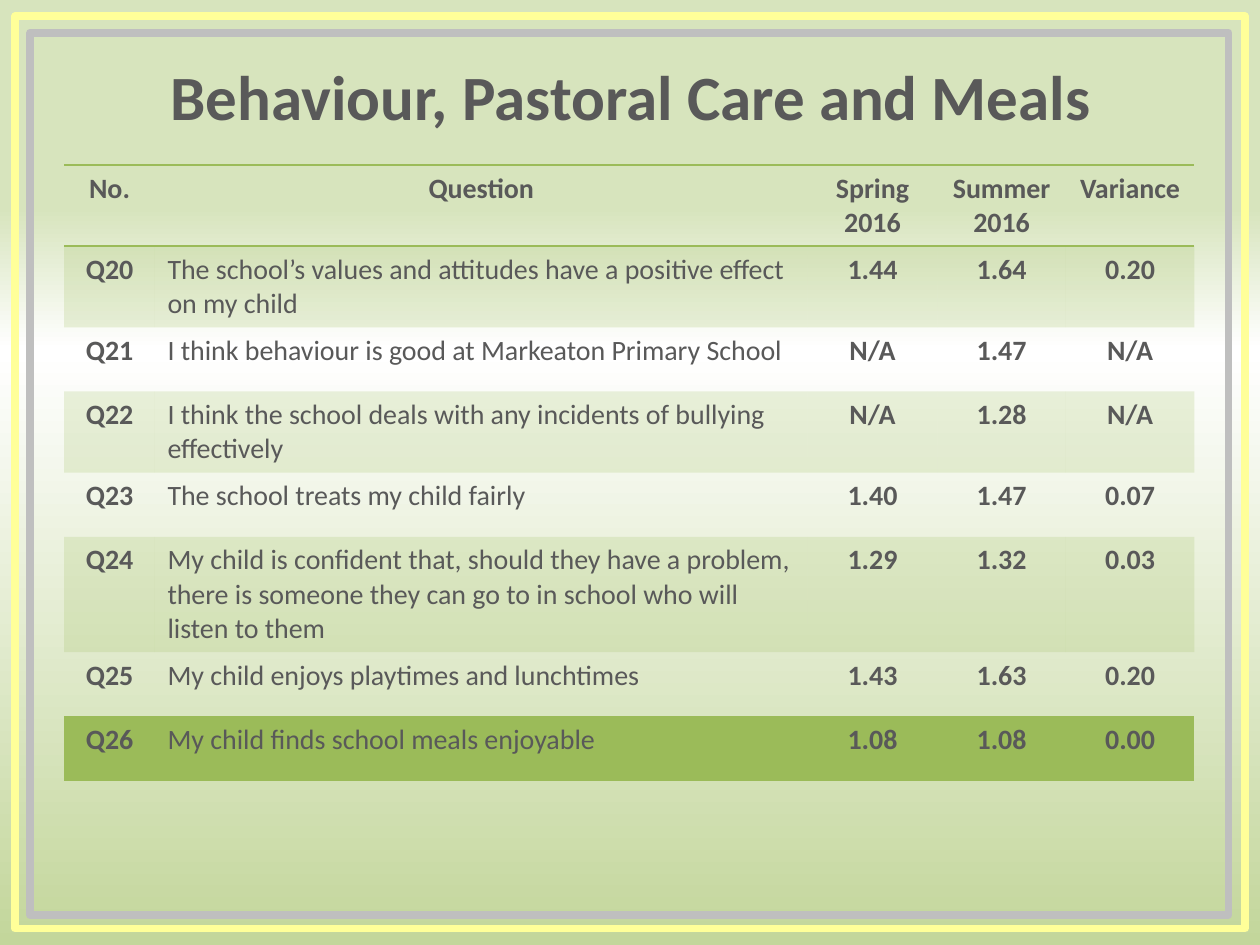
from copy import deepcopy

from lxml.etree import SubElement as Sub
from pptx import Presentation
from pptx.dml.color import RGBColor as RGB
from pptx.enum.shapes import MSO_SHAPE as Shape
from pptx.enum.text import MSO_ANCHOR as Anchor, PP_ALIGN as Align
from pptx.oxml.ns import qn
from pptx.util import Inches, Pt

GREY = RGB(0x59, 0x59, 0x59)
SILVER = RGB(0xBF, 0xBF, 0xBF)
YELLOW = RGB(0xFF, 0xFF, 0x99)
GREEN = RGB(0x9B, 0xBB, 0x59)
PALE = RGB(0xD7, 0xE4, 0xBD)
WHITE = RGB(0xFF, 0xFF, 0xFF)
MOSS = RGB(0xC3, 0xD6, 0x9B)

PLAIN = "{2D5ABB26-0587-4C30-8999-92F81FD0307C}"  # no style, no grid
COLS = [0.72, 5.18, 1.03, 1.02, 1.02]
ROWS = [
    ("No.", "Question", "Spring 2016", "Summer 2016", "Variance"),
    ("Q20", "The school’s values and attitudes have a positive effect on my child",
     "1.44", "1.64", "0.20"),
    ("Q21", "I think behaviour is good at Markeaton Primary School",
     "N/A", "1.47", "N/A"),
    ("Q22", "I think the school deals with any incidents of bullying effectively",
     "N/A", "1.28", "N/A"),
    ("Q23", "The school treats my child fairly", "1.40", "1.47", "0.07"),
    ("Q24", "My child is confident that, should they have a problem, there is "
     "someone they can go to in school who will listen to them",
     "1.29", "1.32", "0.03"),
    ("Q25", "My child enjoys playtimes and lunchtimes", "1.43", "1.63", "0.20"),
    ("Q26", "My child finds school meals enjoyable", "1.08", "1.08", "0.00"),
]


def put_text(frame, text, size=16, bold=True, align=Align.CENTER):
    para = frame.paragraphs[0]
    para.alignment = align
    run = para.add_run()
    run.text = text
    font = run.font
    font.name, font.size, font.bold = "Calibri", Pt(size), bold
    font.color.rgb = GREY


def paint_back(slide):
    fill = slide.background.fill
    fill.gradient()
    fill.gradient_angle = 270  # counter-clockwise: top to bottom
    stops = slide.element.find(".//" + qn("a:gsLst"))
    stops.append(deepcopy(stops[-1]))
    marks = [(0.22, PALE), (0.37, WHITE), (1, MOSS)]
    for stop, (place, color) in zip(fill.gradient_stops, marks):
        stop.position = place
        stop.color.rgb = color


def add_title(slide, text):
    title = slide.shapes.title
    title.left, title.top = Inches(0.28), Inches(0.13)
    title.width, title.height = Inches(9.45), Inches(1.26)
    title.text_frame.vertical_anchor = Anchor.MIDDLE
    put_text(title.text_frame, text, size=36)


def add_frame(slide, left, top, width, height, color):
    box = slide.shapes.add_shape(Shape.RECTANGLE, Inches(left), Inches(top),
                                 Inches(width), Inches(height))
    box.shadow.inherit = False
    box.fill.background()
    box.line.color.rgb = color
    box.line.width = Pt(4.5)


def add_rule(cell, side):
    line = Sub(cell._tc.get_or_add_tcPr(), qn("a:ln" + side), w=str(Pt(1)))
    Sub(Sub(line, qn("a:solidFill")), qn("a:srgbClr"), val=str(GREEN))


def tint(cell):
    cell.fill.solid()
    cell.fill.fore_color.rgb = GREEN
    color = cell._tc.tcPr.find(".//" + qn("a:srgbClr"))
    Sub(color, qn("a:alpha"), val="20000")


def add_grid(slide):
    high = 0.51
    grid = slide.shapes.add_table(
        len(ROWS), len(COLS), Inches(0.51), Inches(1.31),
        Inches(sum(COLS)), Inches(high * len(ROWS))).table
    grid._tbl.tblPr.find(qn("a:tableStyleId")).text = PLAIN
    grid.horz_banding = False
    for col, width in zip(grid.columns, COLS):
        col.width = Inches(width)
    for i, row in enumerate(ROWS):
        grid.rows[i].height = Inches(high)
        for j, text in enumerate(row):
            cell = grid.cell(i, j)
            ask = i > 0 and j == 1  # question text
            put_text(cell.text_frame, text, bold=not ask,
                     align=Align.LEFT if ask else Align.CENTER)
            # Rules around the head and below the last row
            if i == 0:
                add_rule(cell, "T")
            if i in (0, len(ROWS) - 1):
                add_rule(cell, "B")
            # Every other row is tinted
            if i % 2:
                tint(cell)
            else:
                cell.fill.background()


def main():
    deck = Presentation()
    deck.slide_width, deck.slide_height = Inches(10), Inches(7.5)
    slide = deck.slides.add_slide(deck.slide_layouts[5])
    paint_back(slide)
    add_title(slide, "Behaviour, Pastoral Care and Meals")
    # Double border
    add_frame(slide, 0.12, 0.13, 9.76, 7.24, YELLOW)
    add_frame(slide, 0.24, 0.26, 9.51, 7, SILVER)
    add_grid(slide)
    deck.save("out.pptx")


if __name__ == "__main__":
    main()
